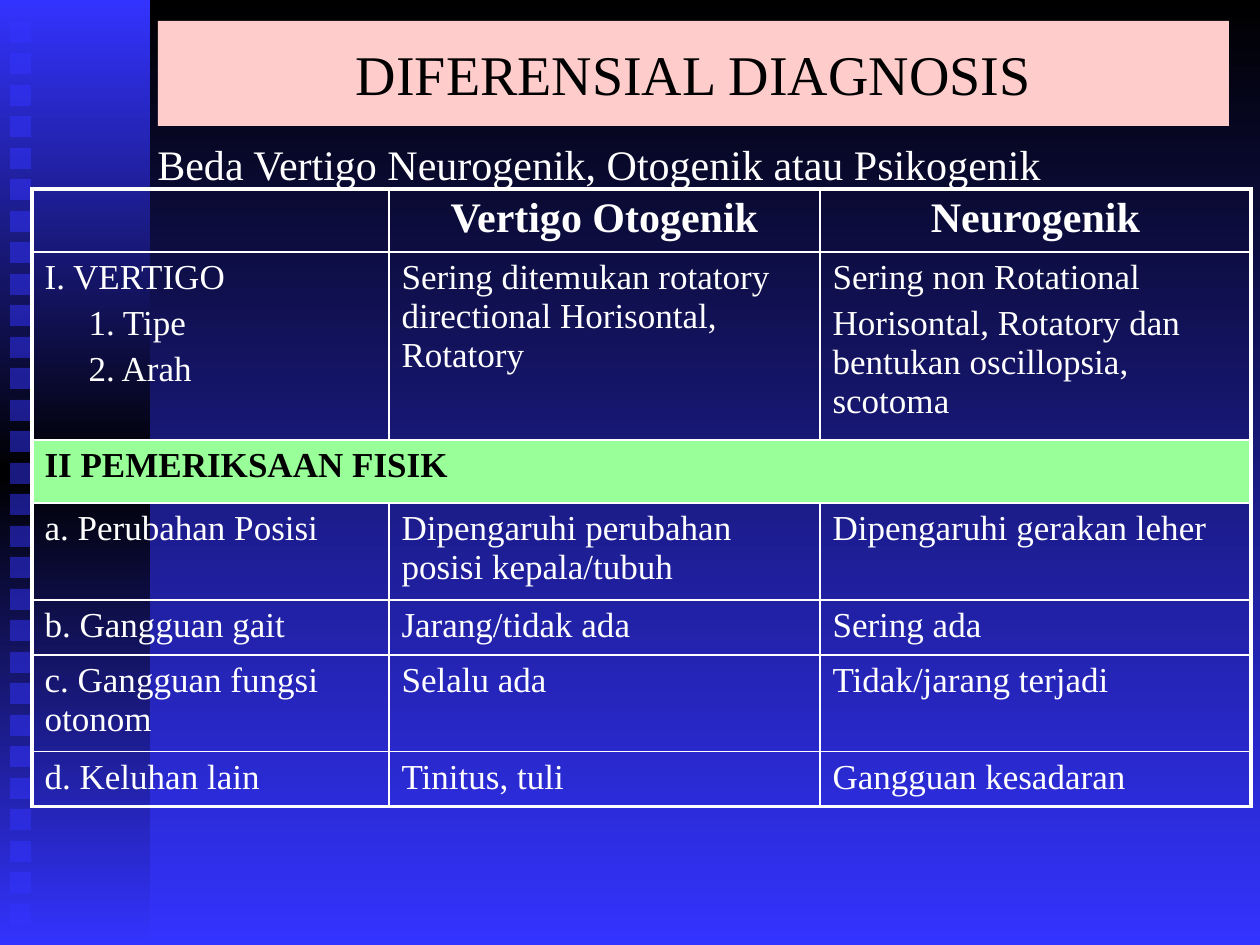
from copy import deepcopy

from pptx import Presentation
from pptx.dml.color import RGBColor
from pptx.enum.shapes import MSO_SHAPE as SHAPE
from pptx.enum.text import MSO_ANCHOR as ANCHOR, MSO_AUTO_SIZE as AUTO, PP_ALIGN as ALIGN
from pptx.oxml import parse_xml
from pptx.oxml.ns import nsdecls, qn
from pptx.util import Pt

PX = 914400 // 126
FONT = "Times New Roman"
BLACK = RGBColor(0x00, 0x00, 0x00)
WHITE = RGBColor(0xFF, 0xFF, 0xFF)
BLUE = RGBColor(0x33, 0x33, 0xFF)
PINK = RGBColor(0xFF, 0xCC, 0xCC)
GREEN = RGBColor(0x99, 0xFF, 0x99)


def box(*lengths):
    """Turn px lengths into EMU."""
    return [n * PX for n in lengths]


def style(p, size, color, bold=False, align=ALIGN.LEFT):
    p.alignment = align
    for r in p.runs:
        r.font.name = FONT
        r.font.size = Pt(size)
        r.font.bold = bold
        r.font.color.rgb = color


prs = Presentation()
prs.slide_width, prs.slide_height = box(1260, 945)
s = prs.slides.add_slide(prs.slide_layouts[5])

# Background and side panel
fill = s.background.fill
fill.gradient()
fill.gradient_angle = 270
for stop, color in zip(fill.gradient_stops, (BLACK, BLUE)):
    stop.color.rgb = color

panel = s.shapes.add_shape(SHAPE.RECTANGLE, *box(0, 0, 150, 945))
panel.shadow.inherit = False
panel.line.fill.background()
panel.fill.gradient()
panel.fill.gradient_angle = 270
stops = panel._element.spPr.find(".//" + qn("a:gsLst"))
stops.insert(1, deepcopy(stops[0]))
for stop, color, position in zip(panel.fill.gradient_stops, (BLUE, BLACK, BLUE), (0, 0.5, 1)):
    stop.color.rgb = color
    stop.position = position

for i in range(29):
    square = s.shapes.add_shape(SHAPE.RECTANGLE, *box(10, 22 + 63 * i // 2, 21, 21))
    square.shadow.inherit = False
    square.line.fill.background()
    square.fill.solid()
    square.fill.fore_color.rgb = BLUE
    rgb = square._element.spPr.find(".//" + qn("a:srgbClr"))
    rgb.append(parse_xml(f'<a:alpha {nsdecls("a")} val="50000"/>'))

# Title and subtitle
title = s.shapes.title
title.left, title.top, title.width, title.height = box(158, 21, 1071, 105)
title.fill.solid()
title.fill.fore_color.rgb = PINK
title.text_frame.text = "DIFERENSIAL DIAGNOSIS"
title.text_frame.vertical_anchor = ANCHOR.MIDDLE
style(title.text_frame.paragraphs[0], 32, BLACK, align=ALIGN.CENTER)
# Keep the title in front of the decoration
s.shapes._spTree.append(title._element)

subtitle = s.shapes.add_textbox(*box(145, 132, 913, 63))
tf = subtitle.text_frame
tf.word_wrap = False
tf.auto_size = AUTO.SHAPE_TO_FIT_TEXT
tf.text = "Beda Vertigo Neurogenik, Otogenik atau Psikogenik"
style(tf.paragraphs[0], 24, WHITE)

# Comparison table
ROWS = [
    (63, ["", "Vertigo Otogenik", "Neurogenik"]),
    (188, ["I. VERTIGO\n1. Tipe\n2. Arah",
           "Sering ditemukan rotatory directional Horisontal, Rotatory",
           "Sering non Rotational\nHorisontal, Rotatory dan bentukan oscillopsia, scotoma"]),
    (63, ["II PEMERIKSAAN FISIK", "", ""]),
    (97, ["a. Perubahan Posisi", "Dipengaruhi perubahan posisi kepala/tubuh",
          "Dipengaruhi gerakan leher"]),
    (55, ["b. Gangguan gait", "Jarang/tidak ada", "Sering ada"]),
    (96, ["c. Gangguan fungsi otonom", "Selalu ada", "Tidak/jarang terjadi"]),
    (55, ["d. Keluhan lain", "Tinitus, tuli", "Gangguan kesadaran"]),
]
COLS = [357, 431, 431]
HEADER, SECTION = 0, 2

height = sum(h for h, _ in ROWS)
table = s.shapes.add_table(len(ROWS), len(COLS), *box(32, 189, sum(COLS), height)).table
table.first_row = table.horz_banding = False
for col, width in zip(table.columns, COLS):
    col.width = width * PX
table.cell(SECTION, 0).merge(table.cell(SECTION, 2))

for i, (row_height, texts) in enumerate(ROWS):
    table.rows[i].height = row_height * PX
    for j, text in enumerate(texts):
        cell = table.cell(i, j)
        outer = {"L": j == 0, "R": j == len(COLS) - 1 or i == SECTION,
                 "T": i == 0, "B": i == len(ROWS) - 1}
        for side, is_outer in outer.items():
            cell._tc.get_or_add_tcPr().append(parse_xml(
                f'<a:ln{side} {nsdecls("a")} w="{Pt(2.25 if is_outer else 1)}">'
                f'<a:solidFill><a:srgbClr val="{WHITE}"/></a:solidFill></a:ln{side}>'))
        if i == SECTION:
            cell.fill.solid()
            cell.fill.fore_color.rgb = GREEN
        else:
            cell.fill.background()
        if not text:
            continue
        cell.text_frame.text = text
        size = 24 if i == HEADER else 20
        for n, p in enumerate(cell.text_frame.paragraphs):
            style(p, size, BLACK if i == SECTION else WHITE, i in (HEADER, SECTION),
                  ALIGN.CENTER if i == HEADER else ALIGN.LEFT)
            p.space_before = Pt(size // 5)
            if j == 0 and n > 0:
                p._p.get_or_add_pPr().set("marL", str(44 * PX))

prs.save("out.pptx")
